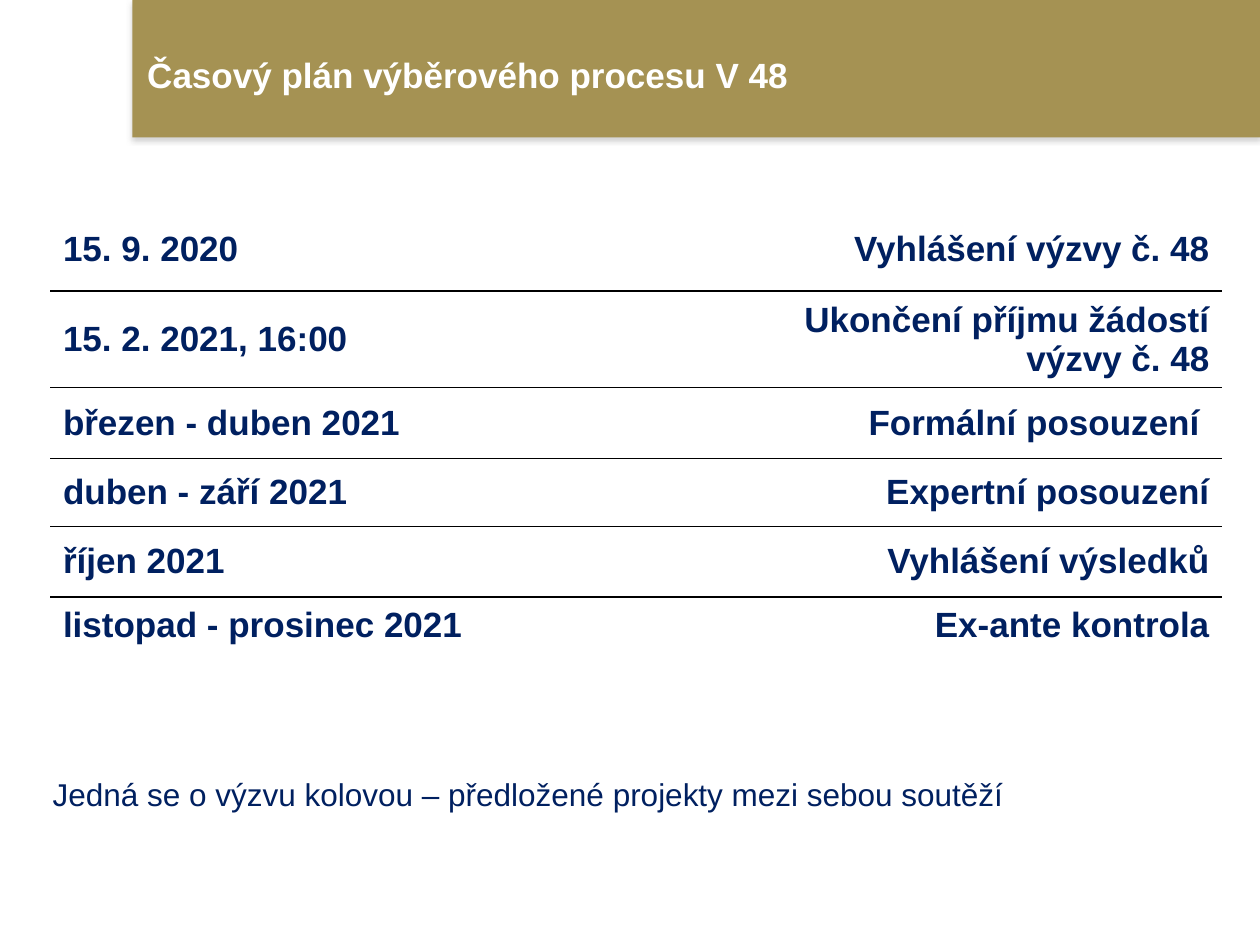
import pptx
import pptx.dml.color
import pptx.enum.shapes
import pptx.enum.text
import pptx.oxml
import pptx.oxml.ns
import pptx.util

Inches = pptx.util.Inches
Align = pptx.enum.text.PP_ALIGN
Anchor = pptx.enum.text.MSO_ANCHOR
NAVY, GOLD, WHITE, BLACK, GREY = "002060", "A59253", "FFFFFF", "000000", "808080"
PLAIN_TABLE = "{2D5ABB26-0587-4C30-8999-92F81FD0307C}"

SCHEDULE = [
    ("15. 9. 2020", "Vyhlášení výzvy č. 48", 0.66),
    ("15. 2. 2021, 16:00", "Ukončení příjmu žádostí výzvy č. 48", 0.72),
    ("březen - duben 2021", "Formální posouzení ", 0.56),
    ("duben - září 2021", "Expertní posouzení", 0.54),
    ("říjen 2021", "Vyhlášení výsledků", 0.56),
    ("listopad - prosinec 2021", "Ex-ante kontrola", 0.45),
]


def color(value):
    return pptx.dml.color.RGBColor.from_string(value)


def element(xml):
    namespace = pptx.oxml.ns.nsdecls("a")
    return pptx.oxml.parse_xml(xml.replace(" ", f" {namespace} ", 1))


def apply(target, values):
    for name, value in values.items():
        setattr(target, name, value)


class Slide:
    font = "Arial"

    def __init__(self, deck):
        self.page = deck.slides.add_slide(deck.slide_layouts[6])

    def fill_text(self, frame, text, size, ink, bold=False, **layout):
        para = frame.paragraphs[0]
        apply(para, layout)
        span = para.add_run()
        span.text = text
        apply(span.font, {"name": self.font, "size": pptx.util.Pt(size), "bold": bold})
        span.font.color.rgb = color(ink)

    def banner(self, left, top, width, height):
        shape = self.page.shapes.add_shape(
            pptx.enum.shapes.MSO_SHAPE.RECTANGLE,
            Inches(left), Inches(top), Inches(width), Inches(height))
        shape.fill.solid()
        shape.fill.fore_color.rgb = color(GOLD)
        shape.line.fill.background()
        shape.shadow.inherit = False
        effects = shape._element.spPr.find(pptx.oxml.ns.qn("a:effectLst"))
        effects.append(element(
            '<a:outerShdw blurRad="39400" dist="22900" dir="5400000" rotWithShape="0">'
            f'<a:srgbClr val="{GREY}"><a:alpha val="35000"/></a:srgbClr></a:outerShdw>'))

    def text(self, text, left, top, width, height, size, ink,
             bold=False, anchor=Anchor.TOP, **layout):
        box = self.page.shapes.add_textbox(
            Inches(left), Inches(top), Inches(width), Inches(height))
        apply(box.text_frame, {"word_wrap": True, "vertical_anchor": anchor})
        self.fill_text(box.text_frame, text, size, ink, bold, **layout)

    def underline(self, cell):
        cell._tc.get_or_add_tcPr().insert(0, element(
            '<a:lnB w="12700"><a:solidFill>'
            f'<a:srgbClr val="{BLACK}"/></a:solidFill></a:lnB>'))

    def schedule(self, rows, left, top, widths):
        height = sum(row[-1] for row in rows)
        frame = self.page.shapes.add_table(
            len(rows), len(widths), Inches(left), Inches(top),
            Inches(sum(widths)), Inches(height))
        table = frame.table
        apply(table, {"first_row": False, "horz_banding": False})
        table._tbl.tblPr.find(pptx.oxml.ns.qn("a:tableStyleId")).text = PLAIN_TABLE
        for column, width in zip(table.columns, widths):
            column.width = Inches(width)
        for index, (date, event, row_height) in enumerate(rows):
            table.rows[index].height = Inches(row_height)
            for cell, text, align in zip(table.rows[index].cells, (date, event),
                                         (Align.LEFT, Align.RIGHT)):
                cell.vertical_anchor = Anchor.MIDDLE
                cell.fill.background()
                self.fill_text(cell.text_frame, text, 20, NAVY, True, alignment=align)
                if index < len(rows) - 1:
                    self.underline(cell)


def main():
    deck = pptx.Presentation()
    apply(deck, {"slide_width": Inches(10), "slide_height": Inches(7.5)})
    slide = Slide(deck)
    slide.banner(1.05, 0, 8.95, 1.09)
    slide.text("Časový plán výběrového procesu V 48", 1.07, -0.11, 8.62, 1.45,
               20, WHITE, True, Anchor.MIDDLE, line_spacing=0.9)
    slide.schedule(SCHEDULE, 0.4, 1.65, (5.27, 4.03))
    slide.text("Jedná se o výzvu kolovou – předložené projekty mezi sebou soutěží",
               0.32, 6.1, 9.52, 0.4, 18, NAVY)
    deck.save("out.pptx")


if __name__ == "__main__":
    main()
